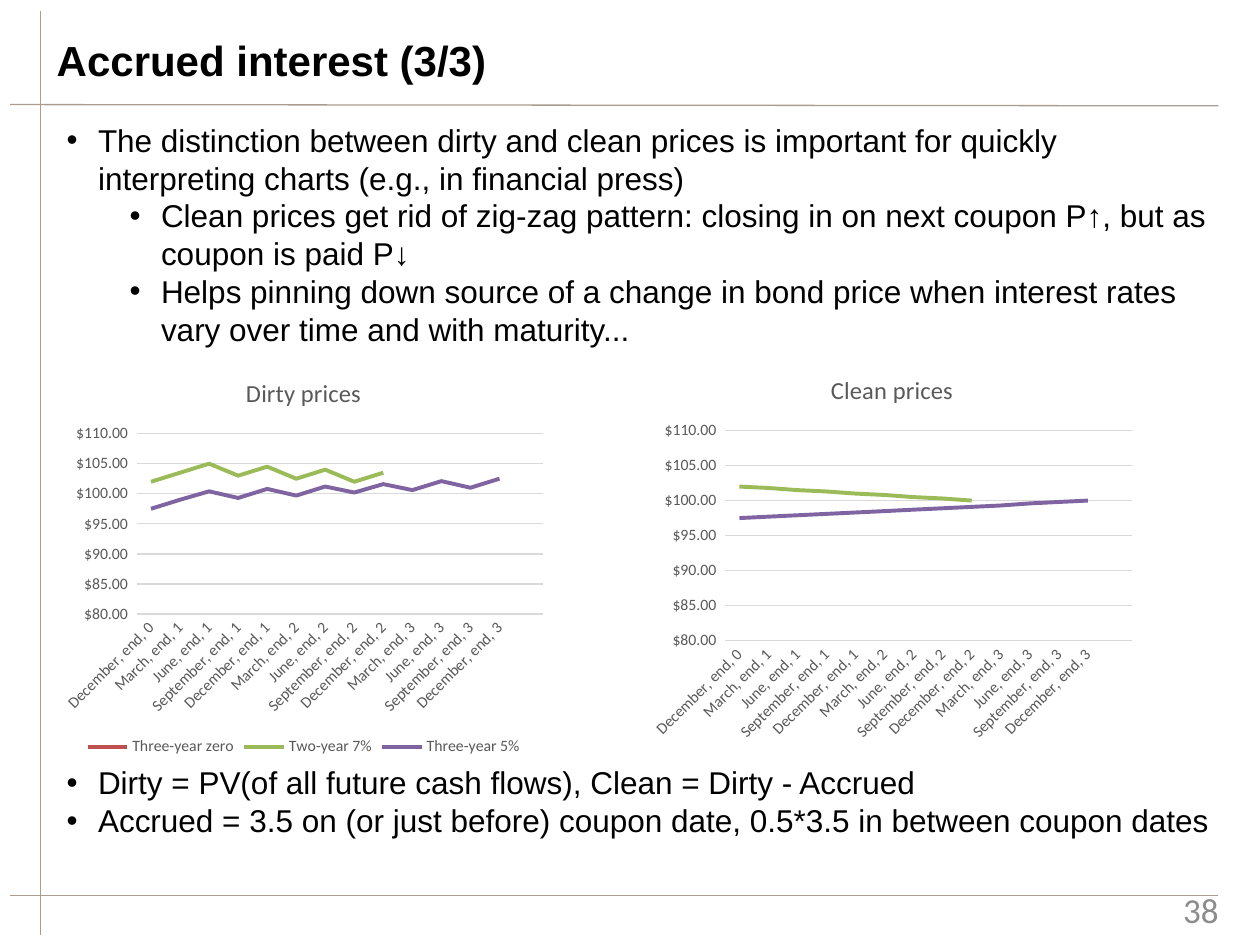
from lxml import etree
from pptx import Presentation
from pptx.chart.data import CategoryChartData
from pptx.dml.color import RGBColor
from pptx.enum.chart import XL_CHART_TYPE, XL_LEGEND_POSITION as LEGEND, XL_TICK_MARK as TICK
from pptx.enum.shapes import MSO_CONNECTOR
from pptx.enum.text import MSO_ANCHOR, PP_ALIGN
from pptx.oxml.ns import qn
from pptx.util import Inches, Pt

BLACK, GRAY, GRID, RULE, PAGE = "000000", "595959", "D9D9D9", "AA9C8F", "8C8C8C"
SERIES_COLORS = ["C0504D", "9BBB59", "8064A2"]
PRICE_FORMAT = '"$"#,##0.00_);[Red]\\("$"#,##0.00\\)'

QUARTERS = ["December, end, 0"] + [
    f"{month}, end, {year}"
    for year in (1, 2, 3)
    for month in ("March", "June", "September", "December")
]
ZERO = [84, 85.2, 86.4, 87.7, 89, 90.3, 91.6, 93, 94.3, 95.7, 97.1, 98.6, 100]
MATURED = [None] * 5
DIRTY = {
    "Three-year zero": ZERO,
    "Two-year 7%": [102, 103.5, 105, 103, 104.5, 102.5, 104, 102, 103.5] + MATURED,
    "Three-year 5%": [97.5, 99, 100.4, 99.3, 100.8, 99.7, 101.2, 100.2, 101.6,
                      100.6, 102.1, 101, 102.5],
}
CLEAN = {
    "Series 1": ZERO,
    "Series 2": [102, 101.8, 101.5, 101.3, 101, 100.8, 100.5, 100.3, 100] + MATURED,
    "Series 3": [97.5, 97.7, 97.9, 98.1, 98.3, 98.5, 98.7, 98.9, 99.1,
                 99.3, 99.6, 99.8, 100],
}


def rgb(color):
    return RGBColor.from_string(color)


class Deck:
    font, chart_font = "Arial", "Calibri"

    def __init__(self, prs):
        self.s = prs.slides.add_slide(prs.slide_layouts[5])

    def style(self, font, size, color, name, bold=False):
        font.size, font.name, font.bold = Pt(size), name, bold
        font.color.rgb = rgb(color)

    def place(self, sp, x, y, w, h):
        sp.left, sp.top, sp.width, sp.height = (Inches(v) for v in (x, y, w, h))

    def line(self, x1, y1, x2, y2):
        cn = self.s.shapes.add_connector(
            MSO_CONNECTOR.STRAIGHT, Inches(x1), Inches(y1), Inches(x2), Inches(y2))
        cn.line.color.rgb = rgb(RULE)
        cn.line.width = Pt(0.75)
        etree.SubElement(cn._element.spPr, qn("a:effectLst"))

    def title(self, text, x, y, w, h):
        sp = self.s.shapes.title
        self.place(sp, x, y, w, h)
        tf = sp.text_frame
        tf.text = text
        tf.vertical_anchor = MSO_ANCHOR.TOP
        tf.margin_top = Inches(0.08)
        p = tf.paragraphs[0]
        p.alignment = PP_ALIGN.LEFT
        self.style(p.runs[0].font, 24, BLACK, self.font, bold=True)

    def text_box(self, x, y, w, h):
        sp = self.s.shapes.add_textbox(Inches(x), Inches(y), Inches(w), Inches(h))
        sp.text_frame.word_wrap = True
        return sp.text_frame

    def page_number(self, text, x, y, w, h):
        tf = self.text_box(x, y, w, h)
        tf.text = text
        tf.vertical_anchor = MSO_ANCHOR.MIDDLE
        p = tf.paragraphs[0]
        p.alignment = PP_ALIGN.RIGHT
        self.style(p.runs[0].font, 20, PAGE, self.chart_font)

    def bullets(self, items, x, y, w, h):
        tf = self.text_box(x, y, w, h)
        for i, (level, text) in enumerate(items):
            p = tf.add_paragraph() if i else tf.paragraphs[0]
            p.text = text
            p.level = level
            p.line_spacing = Pt(21.6)
            pPr = p._p.get_or_add_pPr()
            pPr.set("marL", str(Inches(0.25 + 0.5 * level)))
            pPr.set("indent", str(Inches(-0.25)))
            etree.SubElement(pPr, qn("a:buFont")).set("typeface", self.font)
            etree.SubElement(pPr, qn("a:buChar")).set("char", "•")
            self.style(p.runs[0].font, 18, BLACK, self.font)

    def line_chart(self, title, series, x, y, w, h, legend=False):
        data = CategoryChartData(number_format=PRICE_FORMAT)
        data.categories = QUARTERS
        for name, values in series.items():
            data.add_series(name, values)
        chart = self.s.shapes.add_chart(
            XL_CHART_TYPE.LINE, Inches(x), Inches(y), Inches(w), Inches(h), data).chart
        self.style(chart.font, 10, BLACK, self.chart_font)
        # Title and legend
        chart.has_title = True
        tf = chart.chart_title.text_frame
        tf.text = title
        self.style(tf.paragraphs[0].runs[0].font, 14, GRAY, self.chart_font)
        chart.chart_title.include_in_layout = False
        chart.has_legend = legend
        if legend:
            chart.legend.position = LEGEND.BOTTOM
            chart.legend.include_in_layout = False
            self.style(chart.legend.font, 9, GRAY, self.chart_font)
        # Axes
        cat, val = chart.category_axis, chart.value_axis
        for axis in (cat, val):
            axis.major_tick_mark = axis.minor_tick_mark = TICK.NONE
            self.style(axis.tick_labels.font, 9, GRAY, self.chart_font)
        body = cat._element.find(qn("c:txPr")).find(qn("a:bodyPr"))
        body.set("rot", str(-45 * 60000))
        val.minimum_scale, val.maximum_scale, val.major_unit = 80, 110, 5
        val.tick_labels.number_format = PRICE_FORMAT
        val.tick_labels.number_format_is_linked = False
        val.format.line.fill.background()
        val.has_major_gridlines = True
        for line in (cat.format.line, val.major_gridlines.format.line):
            line.color.rgb = rgb(GRID)
            line.width = Pt(0.75)
        # Series
        plot = chart.plots[0]
        plot.vary_by_categories = False
        for ser, color in zip(plot.series, SERIES_COLORS):
            ser.smooth = False
            ser.format.line.color.rgb = rgb(color)
            ser.format.line.width = Pt(2.25)


def main():
    prs = Presentation()
    prs.slide_width, prs.slide_height = Inches(10), Inches(7.5)
    deck = Deck(prs)

    # Frame rules and page number
    deck.line(0.32, 0.09, 0.32, 7.42)
    deck.line(0.08, 0.83, 9.67, 0.84)
    deck.line(0.08, 7.11, 9.67, 7.11)
    deck.page_number("38", 7.44, 7.08, 2.33, 0.27)

    # Title and text above the charts
    deck.title("Accrued interest (3/3)", 0.35, 0.19, 8.4, 0.5)
    deck.bullets([
        (0, "The distinction between dirty and clean prices is important for quickly "
            "interpreting charts (e.g., in financial press)"),
        (1, "Clean prices get rid of zig-zag pattern: closing in on next coupon P↑, "
            "but as coupon is paid P↓"),
        (1, "Helps pinning down source of a change in bond price when interest rates "
            "vary over time and with maturity..."),
    ], 0.43, 0.91, 9.33, 1.9)

    # Price charts
    deck.line_chart("Dirty prices", DIRTY, 0.43, 2.83, 3.96, 3.21, legend=True)
    deck.line_chart("Clean prices", CLEAN, 5.1, 2.81, 3.96, 3.14)

    # Text below the charts
    deck.bullets([
        (0, "Dirty = PV(of all future cash flows), Clean = Dirty - Accrued"),
        (0, "Accrued = 3.5 on (or just before) coupon date, 0.5*3.5 in between "
            "coupon dates"),
    ], 0.43, 6.01, 9.33, 0.7)

    prs.save("out.pptx")


if __name__ == "__main__":
    main()
